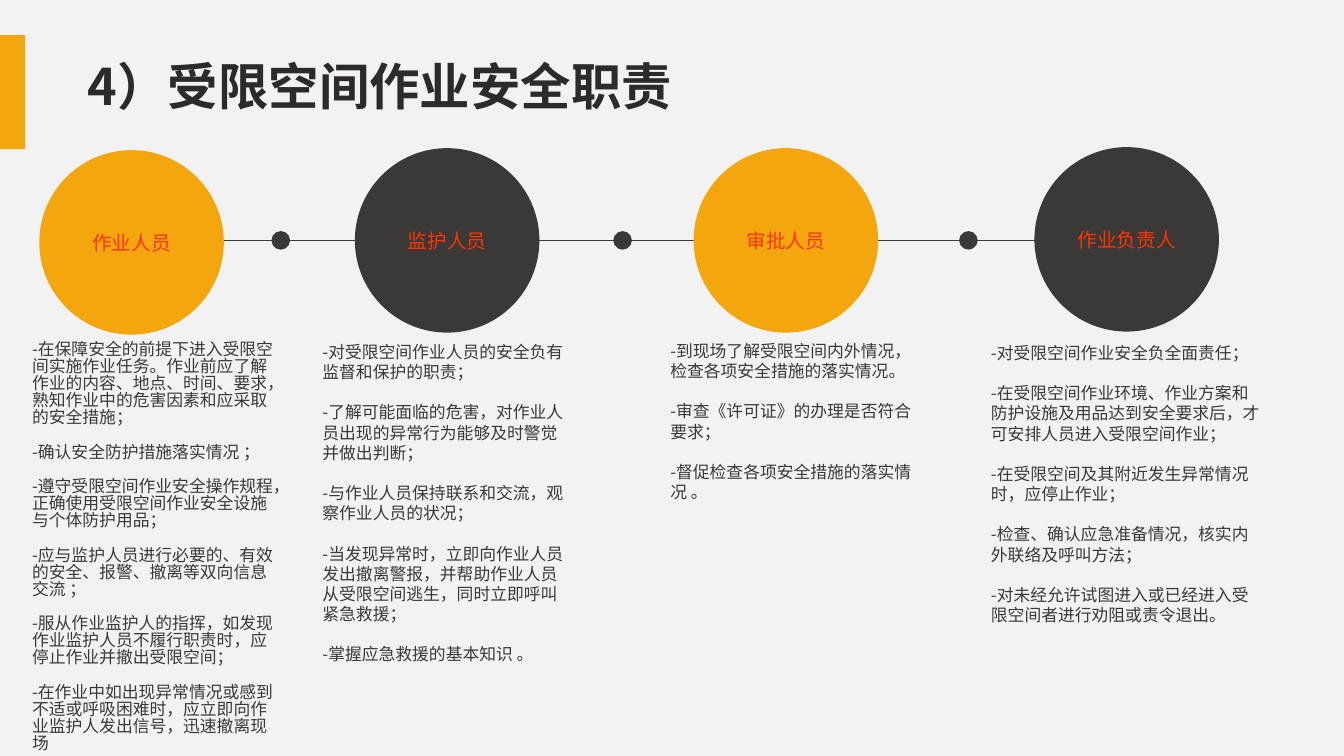
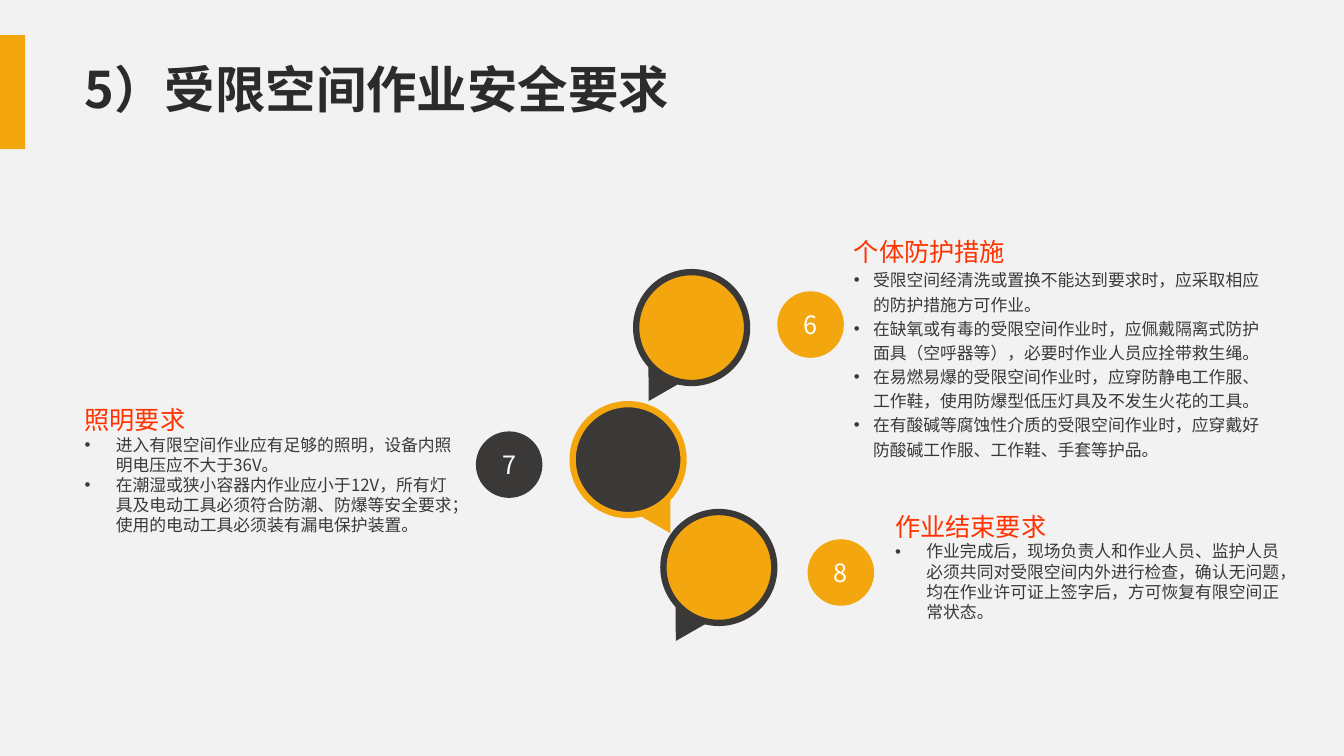
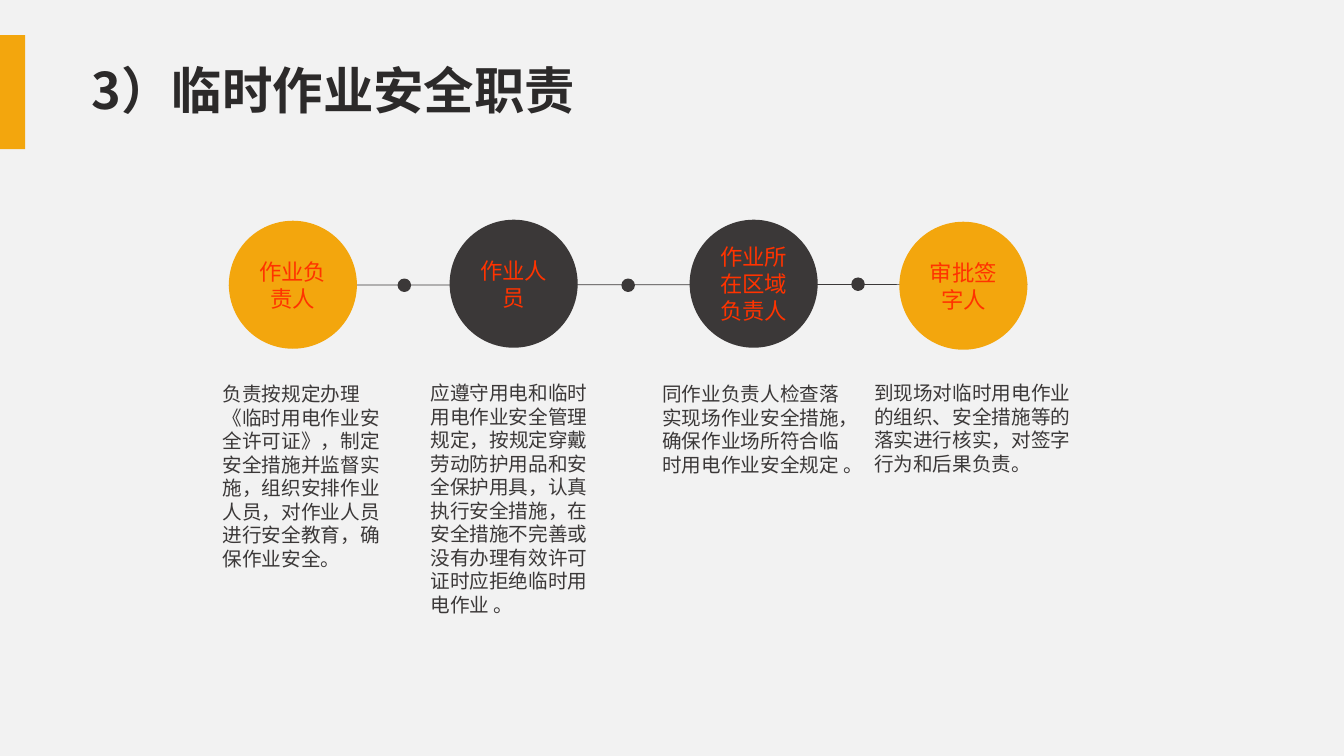
from lxml.etree import SubElement
from pptx import Presentation
from pptx.dml.color import RGBColor
from pptx.enum.shapes import MSO_CONNECTOR, MSO_SHAPE
from pptx.enum.text import MSO_ANCHOR, MSO_AUTO_SIZE, PP_ALIGN
from pptx.oxml.ns import qn
from pptx.util import Pt

PX = 9144
FONT = "Noto Sans CJK SC"
ORANGE = RGBColor(0xF3, 0xA6, 0x0D)
DARK = RGBColor(0x3B, 0x38, 0x38)
INK = RGBColor(0x2C, 0x2A, 0x2A)
RED = RGBColor(0xFF, 0x33, 0x00)
PAPER = RGBColor(0xF2, 0xF2, 0xF2)
WHITE = RGBColor(0xFF, 0xFF, 0xFF)


def add_run(p, text, size, color, bold=False):
    r = p.add_run()
    r.text = text
    r.font.size = Pt(size)
    r.font.bold = bold
    r.font.color.rgb = color
    r.font.name = FONT
    SubElement(r.font._element, qn("a:ea"), typeface=FONT)


def add_solid(s, kind, x, y, w, h, fill, line=None, weight=1):
    sp = s.shapes.add_shape(kind, x * PX, y * PX, w * PX, h * PX)
    sp.shadow.inherit = False
    sp.fill.solid()
    sp.fill.fore_color.rgb = fill
    if line is None:
        sp.line.fill.background()
    else:
        sp.line.color.rgb = line
        sp.line.width = Pt(weight)
    return sp


prs = Presentation()
prs.slide_width, prs.slide_height = 1333 * PX, 750 * PX
bg = prs.slide_master.background.fill
bg.solid()
bg.fore_color.rgb = PAPER

slides = []
for title, x, y in [
    ("4）受限空间作业安全职责", 77, 38),
    ("5）受限空间作业安全要求", 74, 40),
    ("3）临时作业安全职责", 81, 41),
]:
    s = prs.slides.add_slide(prs.slide_layouts[5])
    sp = s.shapes.title
    sp.left, sp.top, sp.width, sp.height = x * PX, y * PX, 875 * PX, 102 * PX
    tf = sp.text_frame
    tf.auto_size = MSO_AUTO_SIZE.NONE
    tf.vertical_anchor = MSO_ANCHOR.MIDDLE
    p = tf.paragraphs[0]
    p.alignment = PP_ALIGN.LEFT
    p.line_spacing = 0.9
    add_run(p, title, 36, INK, True)
    add_solid(s, MSO_SHAPE.RECTANGLE, -1, 35, 26, 113, ORANGE)
    slides.append(s)
confined, safety, temporary = slides

confined_roles = [
    ("作业人员", ORANGE, 39, 149, 22, 334, 265, 0.85, [
        "-在保障安全的前提下进入受限空间实施作业任务。作业前应了解作业的内容、地点、时间、要求，熟知作业中的危害因素和应采取的安全措施；",
        "-确认安全防护措施落实情况 ；",
        "-遵守受限空间作业安全操作规程，正确使用受限空间作业安全设施与个体防护用品；",
        "-应与监护人员进行必要的、有效的安全、报警、撤离等双向信息交流 ；",
        "-服从作业监护人的指挥，如发现作业监护人员不履行职责时，应停止作业并撤出受限空间；",
        "-在作业中如出现异常情况或感到不适或呼吸困难时，应立即向作业监护人发出信号，迅速撤离现场",
    ]),
    ("监护人员", DARK, 352, 147, 310, 334, 267, 1, [
        "-对受限空间作业人员的安全负有监督和保护的职责；",
        "-了解可能面临的危害，对作业人员出现的异常行为能够及时警觉并做出判断；",
        "-与作业人员保持联系和交流，观察作业人员的状况；",
        "-当发现异常时，立即向作业人员发出撤离警报，并帮助作业人员从受限空间逃生，同时立即呼叫紧急救援；",
        "-掌握应急救援的基本知识 。",
    ]),
    ("审批人员", ORANGE, 688, 147, 655, 333, 264, 1, [
        "-到现场了解受限空间内外情况，检查各项安全措施的落实情况。",
        "-审查《许可证》的办理是否符合要求；",
        "-督促检查各项安全措施的落实情况 。",
    ]),
    ("作业负责人", DARK, 1026, 146, 973, 335, 288, 1, [
        "-对受限空间作业安全负全面责任；",
        "-在受限空间作业环境、作业方案和防护设施及用品达到安全要求后，才可安排人员进入受限空间作业；",
        "-在受限空间及其附近发生异常情况时，应停止作业；",
        "-检查、确认应急准备情况，核实内外联络及呼叫方法；",
        "-对未经允许试图进入或已经进入受限空间者进行劝阻或责令退出。",
    ]),
]
temporary_roles = [
    ("作业负责人", ORANGE, 227, 219, 211, 374, 184, 1, [
        "负责按规定办理《临时用电作业安全许可证》，制定安全措施并监督实施，组织安排作业人员，对作业人员进行安全教育，确保作业安全。",
    ]),
    ("作业人员", DARK, 446, 218, 417, 373, 185, 1, [
        "应遵守用电和临时用电作业安全管理规定，按规定穿戴劳动防护用品和安全保护用具，认真执行安全措施，在安全措施不完善或没有办理有效许可证时应拒绝临时用电作业 。",
    ]),
    ("作业所在区域负责人", DARK, 684, 218, 647, 374, 200, 1, [
        "同作业负责人检查落实现场作业安全措施，确保作业场所符合临时用电作业安全规定 。",
    ]),
    ("审批签字人", ORANGE, 892, 220, 857, 373, 219, 1, [
        "到现场对临时用电作业的组织、安全措施等的落实进行核实，对签字行为和后果负责。",
    ]),
]

for s, line, dots, dot, d, label_size, size, h, roles in [
    (confined, (42, 238, 1209, 238), [(270, 230), (609, 230), (952, 230)],
     17, 183, 14, 12, 352, confined_roles),
    (temporary, (227, 283, 1019, 282), [(395, 277), (617, 277), (845, 276)],
     12, 127, 16, 14, 245, temporary_roles),
]:
    cn = s.shapes.add_connector(MSO_CONNECTOR.STRAIGHT, *[v * PX for v in line])
    cn.line.color.rgb = DARK
    cn.line.width = Pt(0.5)
    SubElement(cn._element.spPr, qn("a:effectLst"))
    for x, y in dots:
        add_solid(s, MSO_SHAPE.OVAL, x, y, dot, dot, DARK, DARK)
    for label, fill, x, y, text_x, text_y, w, spacing, duties in roles:
        sp = add_solid(s, MSO_SHAPE.OVAL, x, y, d, d, fill)
        p = sp.text_frame.paragraphs[0]
        p.alignment = PP_ALIGN.CENTER
        add_run(p, label, label_size, RED)
        tb = s.shapes.add_textbox(text_x * PX, text_y * PX, w * PX, h * PX)
        tf = tb.text_frame
        tf.word_wrap = True
        for i, duty in enumerate(duties):
            p = tf.add_paragraph() if i else tf.paragraphs[0]
            p.line_spacing = spacing
            p.space_before = Pt(14.4 * spacing if i else 0)
            add_run(p, duty, size, DARK)

for x, y, fill, edge, tail_x, angle in [
    (631, 270, ORANGE, DARK, 2, 210),
    (568, 401, DARK, ORANGE, 71, 150),
    (658, 508, ORANGE, DARK, 2, 210),
]:
    add_solid(safety, MSO_SHAPE.OVAL, x, y, 110, 110, fill, edge, 4.5)
    tail = add_solid(safety, MSO_SHAPE.ISOSCELES_TRIANGLE, x + tail_x, y + 99, 36, 31, edge)
    tail.rotation = angle

for number, fill, x, y, text_x, text_y, w, h, indent, spacing, heading, rules in [
    ("6", ORANGE, 771, 289, 837, 229, 425, 238, 19, 1.2, "个体防护措施", [
        "受限空间经清洗或置换不能达到要求时，应采取相应的防护措施方可作业。",
        "在缺氧或有毒的受限空间作业时，应佩戴隔离式防护面具（空呼器等），必要时作业人员应拴带救生绳。",
        "在易燃易爆的受限空间作业时，应穿防静电工作服、工作鞋，使用防爆型低压灯具及不发生火花的工具。",
        "在有酸碱等腐蚀性介质的受限空间作业时，应穿戴好防酸碱工作服、工作鞋、手套等护品。",
    ]),
    ("7", DARK, 472, 428, 74, 396, 385, 156, 31, 1, "照明要求", [
        "进入有限空间作业应有足够的照明，设备内照明电压应不大于36V。",
        "在潮湿或狭小容器内作业应小于12V，所有灯具及电动工具必须符合防潮、防爆等安全要求；使用的电动工具必须装有漏电保护装置。",
    ]),
    ("8", ORANGE, 801, 535, 878, 502, 406, 143, 31, 1, "作业结束要求", [
        "作业完成后，现场负责人和作业人员、监护人员必须共同对受限空间内外进行检查，确认无问题，均在作业许可证上签字后，方可恢复有限空间正常状态。",
    ]),
]:
    sp = add_solid(safety, MSO_SHAPE.OVAL, x, y, 66, 66, fill)
    p = sp.text_frame.paragraphs[0]
    p.alignment = PP_ALIGN.CENTER
    add_run(p, number, 18, WHITE)
    tb = safety.shapes.add_textbox(text_x * PX, text_y * PX, w * PX, h * PX)
    tf = tb.text_frame
    tf.word_wrap = True
    add_run(tf.paragraphs[0], heading, 18, RED)
    for rule in rules:
        p = tf.add_paragraph()
        p.line_spacing = spacing
        pPr = p._p.get_or_add_pPr()
        pPr.set("marL", str(indent * PX))
        pPr.set("indent", str(-indent * PX))
        SubElement(pPr, qn("a:buFont"), typeface="Arial")
        SubElement(pPr, qn("a:buChar"), char="•")
        add_run(p, rule, 12, DARK)

prs.save("out.pptx")
